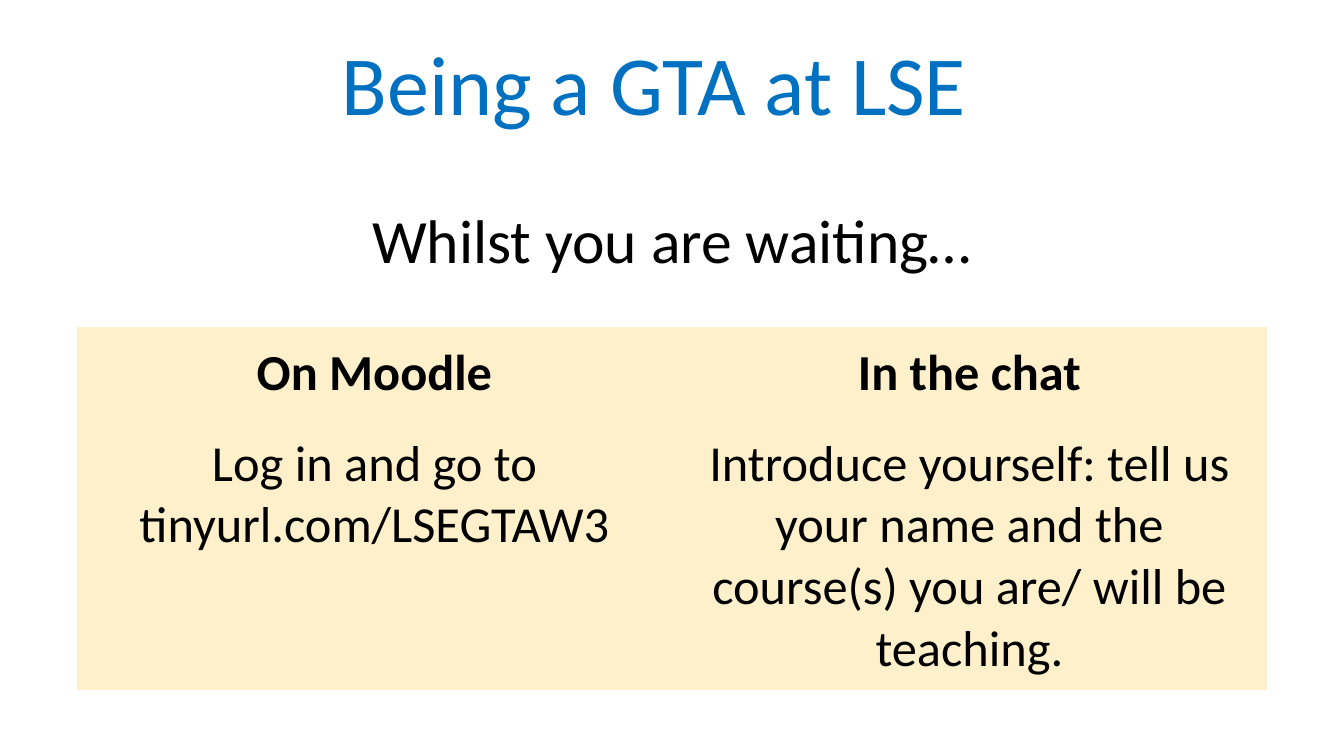
import pptx
import pptx.dml.color
import pptx.enum.text
import pptx.util

PX = 914400 / 100.8
FONT = "Calibri"
COLOURS = {"heading": "0070C0", "text": "000000", "panel": "FFF0CC"}
NO_GRID_STYLE = "{2D5ABB26-0587-4C30-8999-92F81FD0307C}"
ANCHOR = pptx.enum.text.MSO_ANCHOR

ACTIVITIES = [
    ["On Moodle", "In the chat"],
    [
        "Log in and go to tinyurl.com/LSEGTAW3",
        "Introduce yourself: tell us your name and the course(s) you are/ will be teaching.",
    ],
]


def px(length):
    return pptx.util.Emu(round(length * PX))


def rgb(name):
    return pptx.dml.color.RGBColor.from_string(COLOURS[name])


def write_centred(frame, text, size, colour="text", bold=False):
    para = frame.paragraphs[0]
    para.text = text
    para.alignment = pptx.enum.text.PP_ALIGN.CENTER
    para.font.name = FONT
    para.font.size = pptx.util.Pt(size)
    para.font.bold = bold
    para.font.color.rgb = rgb(colour)
    return para


def add_heading(page, box, text, size, anchor, colour="text", spacing=None):
    frame = page.shapes.add_textbox(*map(px, box)).text_frame
    frame.word_wrap = True
    frame.vertical_anchor = anchor
    write_centred(frame, text, size, colour).line_spacing = spacing


def add_activities(page, box, header_height):
    """Fill the box with one borderless column for each activity."""
    left, top, width, height = box
    columns = len(ACTIVITIES[0])
    frame = page.shapes.add_table(len(ACTIVITIES), columns, *map(px, box))
    table = frame.table
    table.horz_banding = False
    table.first_row = False
    table._tbl.tblPr[0].text = NO_GRID_STYLE
    for column in table.columns:
        column.width = px(width / columns)
    table.rows[0].height = px(header_height)
    table.rows[1].height = px(height - header_height)
    for row, texts in enumerate(ACTIVITIES):
        for column, text in enumerate(texts):
            cell = table.cell(row, column)
            cell.fill.solid()
            cell.fill.fore_color.rgb = rgb("panel")
            cell.margin_left = cell.margin_right = px(15)
            cell.margin_top = cell.margin_bottom = px(15)
            write_centred(cell.text_frame, text, 36, bold=row == 0)


def build_waiting_page(deck):
    page = deck.slides.add_slide(deck.slide_layouts[6])
    add_heading(page, (67, 176, 1210, 126), "Whilst you are waiting…", 44, ANCHOR.MIDDLE)
    add_activities(page, (77, 327, 1190, 363), 91)
    add_heading(page, (-18, 37, 1344, 102), "Being a GTA at LSE", 60,
                ANCHOR.BOTTOM, "heading", 0.9)


def main():
    deck = pptx.Presentation()
    deck.slide_width = px(1344)
    deck.slide_height = px(756)
    build_waiting_page(deck)
    deck.save("out.pptx")


if __name__ == "__main__":
    main()
